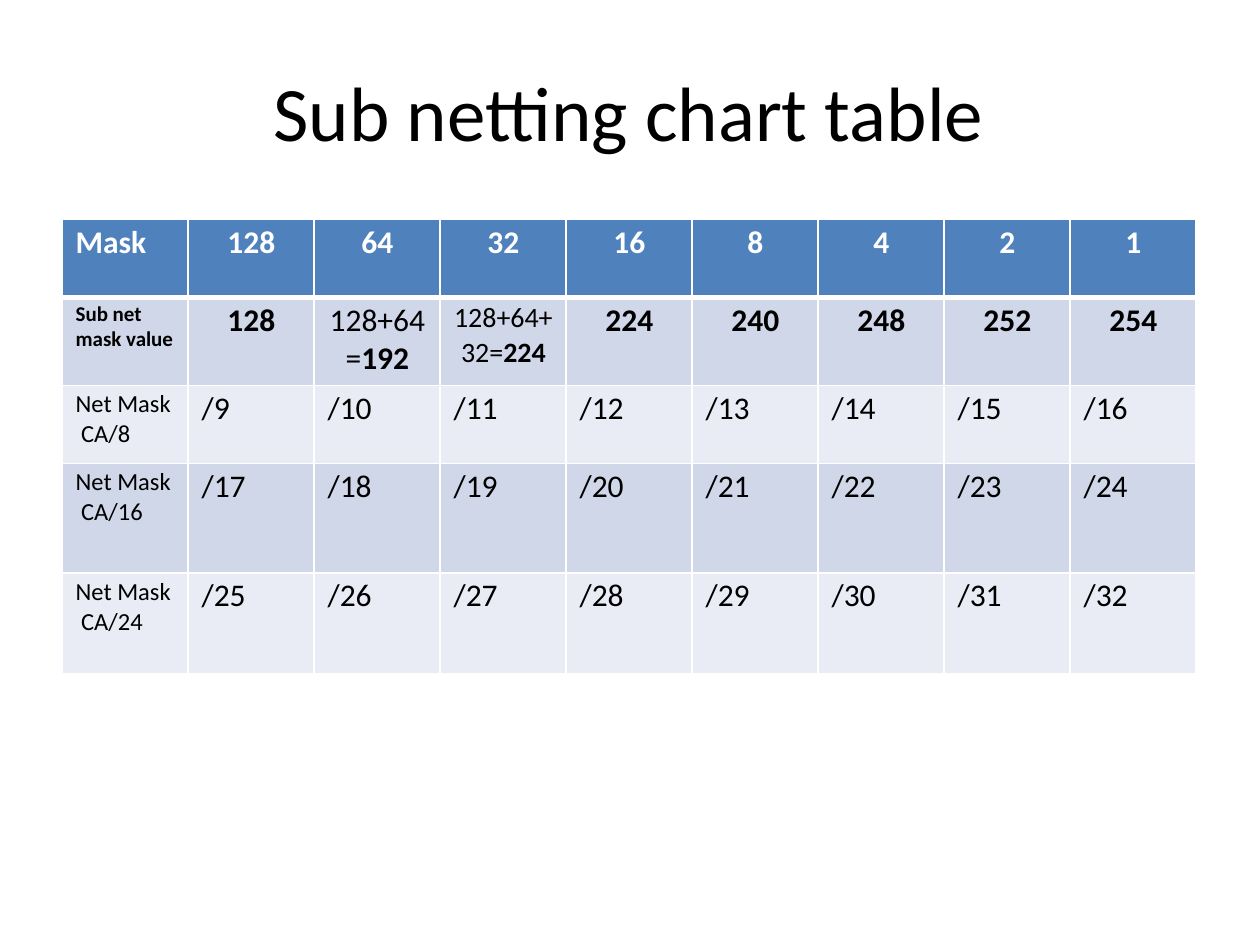
from dataclasses import dataclass

from lxml import etree
from pptx import Presentation
from pptx import util as u
from pptx.dml.color import RGBColor
from pptx.enum import text
from pptx.oxml import ns

FONT = "Calibri"
BLACK = RGBColor(0x00, 0x00, 0x00)
WHITE = RGBColor(0xFF, 0xFF, 0xFF)
HEADER_BLUE = RGBColor(0x4F, 0x81, 0xBC)
DARK_BAND = RGBColor(0xD0, 0xD7, 0xE8)
LIGHT_BAND = RGBColor(0xE9, 0xEC, 0xF4)

LEFT = text.PP_ALIGN.LEFT
CENTER = text.PP_ALIGN.CENTER


@dataclass
class Span:
    text: str
    size: float = 18
    bold: bool = False
    color: RGBColor = BLACK


@dataclass
class Entry:
    lines: list[list[Span]]
    align: text.PP_ALIGN = LEFT


@dataclass
class Row:
    height: float
    fill: RGBColor
    entries: list[Entry]


def entry(words: str, *, align=LEFT, **style) -> Entry:
    return Entry([[Span(words, **style)]], align)


def write_lines(frame, lines: list[list[Span]], *, align=LEFT, before=2.5) -> None:
    for index, spans in enumerate(lines):
        para = frame.paragraphs[0] if index == 0 else frame.add_paragraph()
        para.alignment = align
        para.space_before = u.Pt(before if index == 0 else 0)
        for span in spans:
            # A line break divides one span into several runs
            for part_index, part in enumerate(span.text.split("\n")):
                if part_index:
                    para.add_line_break()
                run = para.add_run()
                run.text = part
                run.font.name = FONT
                run.font.size = u.Pt(span.size)
                run.font.bold = span.bold
                run.font.color.rgb = span.color


def set_borders(cell, *, top: float = 1, bottom: float = 1) -> None:
    properties = cell._tc.get_or_add_tcPr()
    widths = {"a:lnL": 1, "a:lnR": 1, "a:lnT": top, "a:lnB": bottom}
    for position, (tag, width) in enumerate(widths.items()):
        line = etree.Element(ns.qn(tag), w=str(u.Pt(width)))
        fill = etree.SubElement(line, ns.qn("a:solidFill"))
        etree.SubElement(fill, ns.qn("a:srgbClr"), val=str(WHITE))
        properties.insert(position, line)


def draw_table(page, rows: list[Row], *, left: float, top: float, column: float) -> None:
    columns = len(rows[0].entries)
    height = sum(row.height for row in rows)
    table = page.shapes.add_table(
        len(rows), columns, u.Inches(left), u.Inches(top),
        u.Inches(column * columns), u.Inches(height)).table
    for table_column in table.columns:
        table_column.width = u.Inches(column)
    for row_index, row in enumerate(rows):
        table.rows[row_index].height = u.Inches(row.height)
        for column_index, item in enumerate(row.entries):
            cell = table.cell(row_index, column_index)
            cell.margin_left = u.Inches(0.11 if item.align == LEFT else 0.01)
            cell.margin_top = u.Inches(0.03)
            cell.margin_right = cell.margin_bottom = 0
            cell.fill.solid()
            cell.fill.fore_color.rgb = row.fill
            set_borders(cell, top=3 if row_index == 1 else 1,
                        bottom=3 if row_index == 0 else 1)
            write_lines(cell.text_frame, item.lines, align=item.align)


def net_mask_row(prefix: int, height: float, fill: RGBColor) -> Row:
    label = entry(f"Net Mask\n CA/{prefix}", size=14)
    return Row(height, fill, [label] + [entry(f"/{prefix + bit}") for bit in range(1, 9)])


def mask_rows() -> list[Row]:
    header = [entry("Mask", bold=True, color=WHITE)]
    header += [entry(str(2 ** bit), align=CENTER, bold=True, color=WHITE)
               for bit in range(7, -1, -1)]

    values = [
        entry("Sub net\nmask value", size=12, bold=True),
        entry("128", align=CENTER, bold=True),
        Entry([[Span("128+64")], [Span("="), Span("192", bold=True)]], CENTER),
        Entry([[Span("128+64+", 16)], [Span("32=", 16), Span("224", 16, True)]], CENTER),
    ]
    values += [entry(value, align=CENTER, bold=True)
               for value in ("224", "240", "248", "252", "254")]

    return [
        Row(0.62, HEADER_BLUE, header),
        Row(0.7, DARK_BAND, values),
        net_mask_row(8, 0.62, LIGHT_BAND),
        net_mask_row(16, 0.87, DARK_BAND),
        net_mask_row(24, 0.8, LIGHT_BAND),
    ]


def draw_title(page, words: str) -> None:
    box = page.shapes.title
    box.left, box.top = u.Inches(2.16), u.Inches(0.5)
    box.width, box.height = u.Inches(5.69), u.Inches(0.76)
    frame = box.text_frame
    frame.word_wrap = True
    frame.auto_size = text.MSO_AUTO_SIZE.NONE
    frame.vertical_anchor = text.MSO_ANCHOR.TOP
    frame.margin_left = frame.margin_top = u.Inches(0.01)
    frame.margin_right = frame.margin_bottom = 0
    write_lines(frame, [[Span(words, size=44)]], before=1.1)


def main() -> None:
    deck = Presentation()
    deck.slide_width, deck.slide_height = u.Inches(10), u.Inches(7.5)
    page = deck.slides.add_slide(deck.slide_layouts.get_by_name("Title Only"))
    draw_title(page, "Sub netting chart table")
    draw_table(page, mask_rows(), left=0.49, top=1.74, column=1)
    deck.save("out.pptx")


if __name__ == "__main__":
    main()
